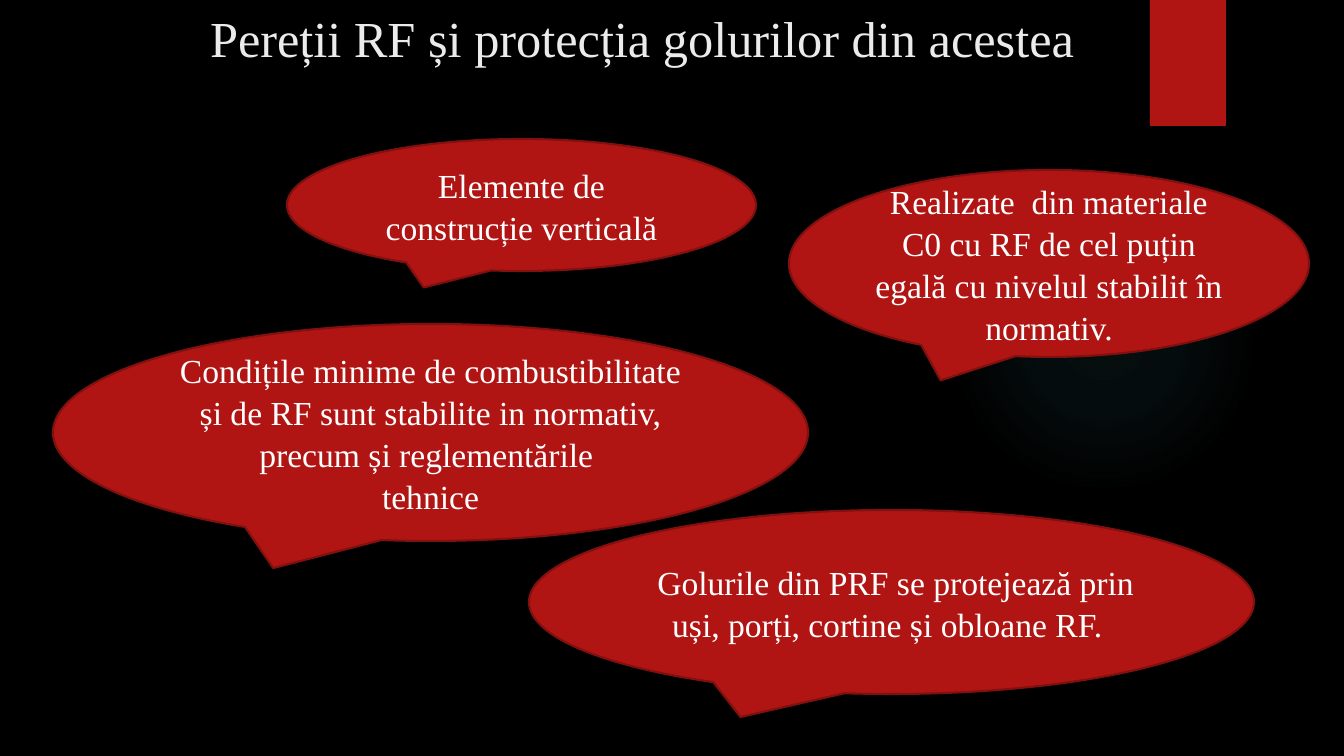
from lxml import etree
from pptx import Presentation
from pptx.dml.color import RGBColor
from pptx.enum.shapes import MSO_SHAPE as Shape
from pptx.enum.text import MSO_ANCHOR as Anchor, PP_ALIGN as Align
from pptx.oxml import parse_xml
from pptx.oxml.ns import nsdecls
from pptx.util import Emu, Pt

TITLE = "Pereții RF și protecția golurilor din acestea"
TITLE_BOX = (23, 0, 1239, 154)
BOOKMARK_BOX = (1150, 0, 76, 126)
GLOW_BOX = (949, 184, 310, 310)
GLOW_STOPS = [(0, 7), (36, 6), (69, 0)]
CALLOUTS = [
    ((287, 139, 469, 132), ["Elemente de construcție verticală"]),
    ((789, 170, 520, 187), [
        "Realizate  din materiale C0 cu RF de cel puțin egală cu nivelul stabilit în normativ."]),
    ((529, 510, 725, 184), [
        " Golurile din PRF se protejează prin uși, porți, cortine și obloane RF. "]),
    ((53, 324, 755, 217), [
        "Condițile minime de combustibilitate și de RF sunt stabilite in normativ, "
        "precum și reglementările ",
        "tehnice"]),
]
FONT = "Times New Roman"
BLACK = RGBColor(0x00, 0x00, 0x00)
RED = RGBColor(0xB0, 0x15, 0x13)
DARK_RED = RGBColor(0x82, 0x10, 0x0E)
TEAL = RGBColor(0x50, 0xB9, 0xC1)
PALE = RGBColor(0xEB, 0xEB, 0xEB)
WHITE = RGBColor(0xFF, 0xFF, 0xFF)
SCALE = 914400 / 100.8


def px(length):
    return Emu(round(length * SCALE))


def add_plain_shape(slide, kind, box):
    shape = slide.shapes.add_shape(kind, *map(px, box))
    shape.shadow.inherit = False
    shape.fill.solid()
    shape.fill.fore_color.rgb = RED
    shape.line.fill.background()
    return shape


def write_text(frame, paragraphs, size, color):
    frame.word_wrap = True
    frame.text = "\n".join(paragraphs)
    for paragraph in frame.paragraphs:
        paragraph.alignment = Align.CENTER
        paragraph.line_spacing = 1.04
        for run in paragraph.runs:
            run.font.name = FONT
            run.font.size = Pt(size)
            run.font.color.rgb = color


def add_glow(slide):
    glow = add_plain_shape(slide, Shape.OVAL, GLOW_BOX)
    stops = "".join(
        f'<a:gs pos="{pos * 1000}"><a:srgbClr val="{TEAL}">'
        f'<a:alpha val="{alpha * 1000}"/></a:srgbClr></a:gs>'
        for pos, alpha in GLOW_STOPS)
    gradient = parse_xml(
        f'<a:gradFill {nsdecls("a")}><a:gsLst>{stops}</a:gsLst>'
        '<a:path path="circle"><a:fillToRect l="50000" t="50000" r="50000" b="50000"/>'
        '</a:path></a:gradFill>')
    properties = glow.element.spPr
    solid = properties.find(etree.QName(gradient).text.replace("gradFill", "solidFill"))
    properties.replace(solid, gradient)


def main():
    deck = Presentation()
    deck.slide_width, deck.slide_height = px(1344), px(756)
    slide = deck.slides.add_slide(deck.slide_layouts[5])
    slide.background.fill.solid()
    slide.background.fill.fore_color.rgb = BLACK

    title = slide.shapes.title
    title.left, title.top, title.width, title.height = map(px, TITLE_BOX)
    title.text_frame.vertical_anchor = Anchor.TOP
    write_text(title.text_frame, [TITLE], 36, PALE)

    add_glow(slide)
    add_plain_shape(slide, Shape.RECTANGLE, BOOKMARK_BOX)
    for box, paragraphs in CALLOUTS:
        callout = add_plain_shape(slide, Shape.OVAL_CALLOUT, box)
        callout.line.color.rgb = DARK_RED
        callout.line.width = Pt(1.5)
        callout.text_frame.vertical_anchor = Anchor.MIDDLE
        write_text(callout.text_frame, paragraphs, 24, WHITE)

    deck.save("out.pptx")


if __name__ == "__main__":
    main()
